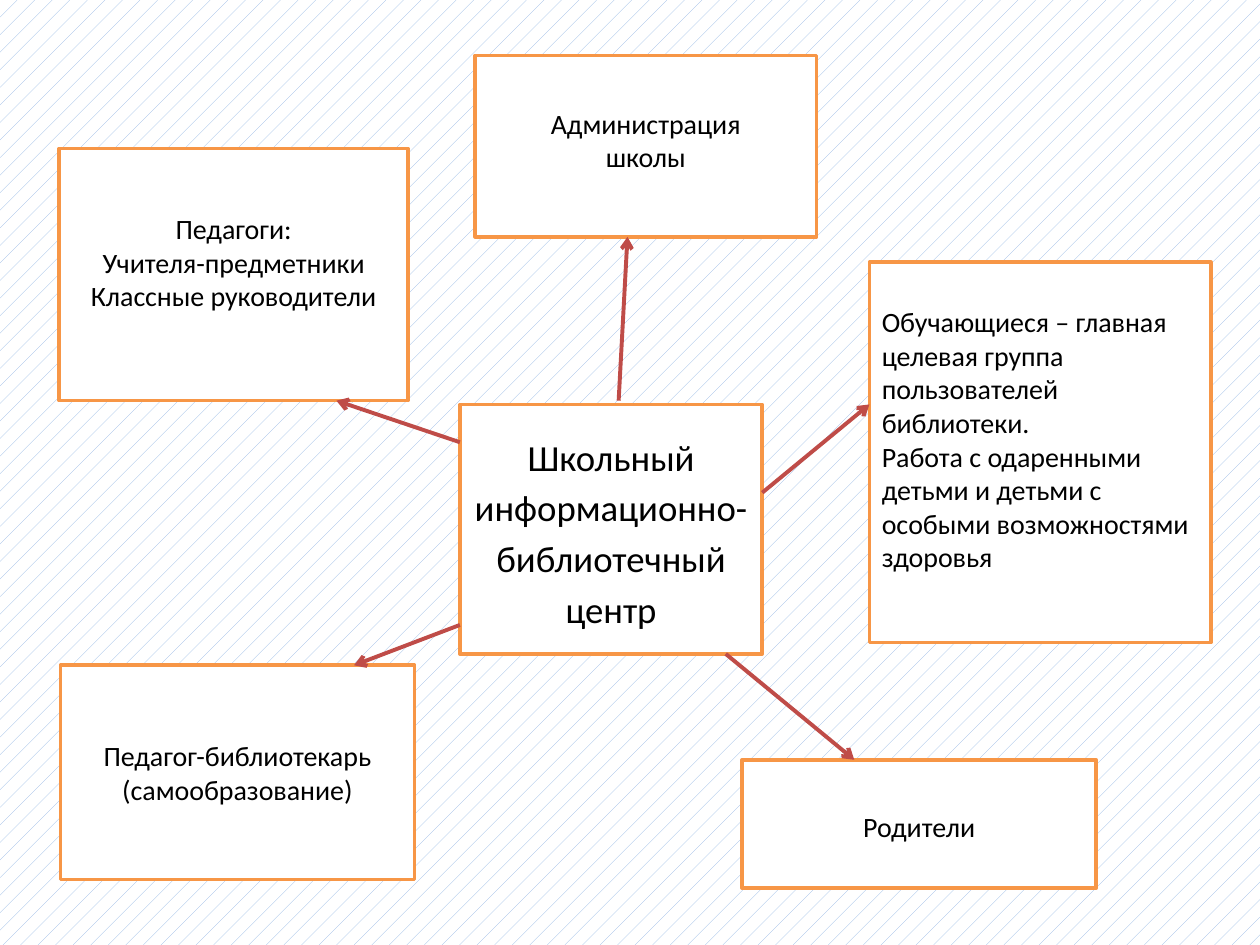
from dataclasses import dataclass

from lxml.etree import SubElement
from pptx import Presentation
from pptx.dml.color import RGBColor
from pptx.enum.dml import MSO_PATTERN
from pptx.enum.shapes import MSO_CONNECTOR, MSO_SHAPE
from pptx.enum.text import MSO_ANCHOR, PP_ALIGN
from pptx.oxml.ns import qn
from pptx.util import Inches, Pt


@dataclass(frozen=True)
class Theme:
    font: str = "Calibri"
    text: RGBColor = RGBColor(0x00, 0x00, 0x00)
    paper: RGBColor = RGBColor(0xFF, 0xFF, 0xFF)
    hatch: RGBColor = RGBColor(0x8E, 0xB4, 0xE3)
    border: RGBColor = RGBColor(0xF7, 0x96, 0x46)
    arrow: RGBColor = RGBColor(0xBF, 0x4C, 0x48)
    center_size: Pt = Pt(21)
    box_size: Pt = Pt(16)
    border_width: Pt = Pt(2)
    arrow_width: Pt = Pt(2.25)


class Diagram:
    def __init__(self, slide, theme):
        self.s = slide
        self.theme = theme

    def background(self):
        fill = self.s.background.fill
        fill.patterned()
        fill.pattern = MSO_PATTERN.PERCENT_5
        fill.fore_color.rgb = self.theme.hatch
        fill.back_color.rgb = self.theme.paper

    def box(self, bounds, lines, size=None, align=PP_ALIGN.CENTER,
            spacing=1.0, bottom=0.05):
        """Add a bordered box; a larger bottom inset lifts its text."""
        t = self.theme
        sp = self.s.shapes.add_shape(MSO_SHAPE.RECTANGLE, *map(Inches, bounds))
        sp.shadow.inherit = False
        sp.fill.solid()
        sp.fill.fore_color.rgb = t.paper
        sp.line.color.rgb = t.border
        sp.line.width = t.border_width
        tf = sp.text_frame
        tf.word_wrap = True
        tf.vertical_anchor = MSO_ANCHOR.MIDDLE
        tf.margin_bottom = Inches(bottom)
        tf.text = "\n".join(lines)
        for p in tf.paragraphs:
            p.alignment = align
            p.line_spacing = spacing
            p.font.name = t.font
            p.font.size = size or t.box_size
            p.font.color.rgb = t.text

    def arrow(self, start, end):
        line = self.s.shapes.add_connector(
            MSO_CONNECTOR.STRAIGHT, *map(Inches, (*start, *end)))
        line.line.color.rgb = self.theme.arrow
        line.line.width = self.theme.arrow_width
        SubElement(line.line._get_or_add_ln(), qn("a:tailEnd"), type="arrow")
        SubElement(line._element.spPr, qn("a:effectLst"))


def main():
    prs = Presentation()
    prs.slide_width, prs.slide_height = Inches(10), Inches(7.5)
    theme = Theme()
    d = Diagram(prs.slides.add_slide(prs.slide_layouts[6]), theme)
    d.background()

    d.box((3.65, 3.21, 2.4, 1.98),
          ["Школьный информационно-библиотечный центр"],
          size=theme.center_size, spacing=1.15)
    d.box((0.47, 1.18, 2.77, 2),
          ["Педагоги:", "Учителя-предметники", "Классные руководители"],
          bottom=0.25)
    d.box((5.89, 6.03, 2.81, 1.02), ["Родители"], spacing=1.15)
    d.box((3.77, 0.44, 2.71, 1.44), ["Администрация", "школы"], bottom=0.15)
    d.box((0.48, 5.28, 2.81, 1.7),
          ["Педагог-библиотекарь", "(самообразование)"])
    d.box((6.9, 2.08, 2.71, 3.02),
          ["Обучающиеся – главная целевая группа пользователей библиотеки.",
           "Работа с одаренными детьми и детьми с особыми возможностями "
           "здоровья"],
          align=PP_ALIGN.LEFT, bottom=0.26)

    for start, end in [
        ((4.91, 3.18), (4.98, 1.88)),
        ((3.65, 3.51), (2.67, 3.18)),
        ((3.65, 4.96), (2.81, 5.28)),
        ((5.76, 5.19), (6.78, 6.03)),
        ((6.05, 3.91), (6.9, 3.21)),
    ]:
        d.arrow(start, end)

    prs.save("out.pptx")


if __name__ == "__main__":
    main()
